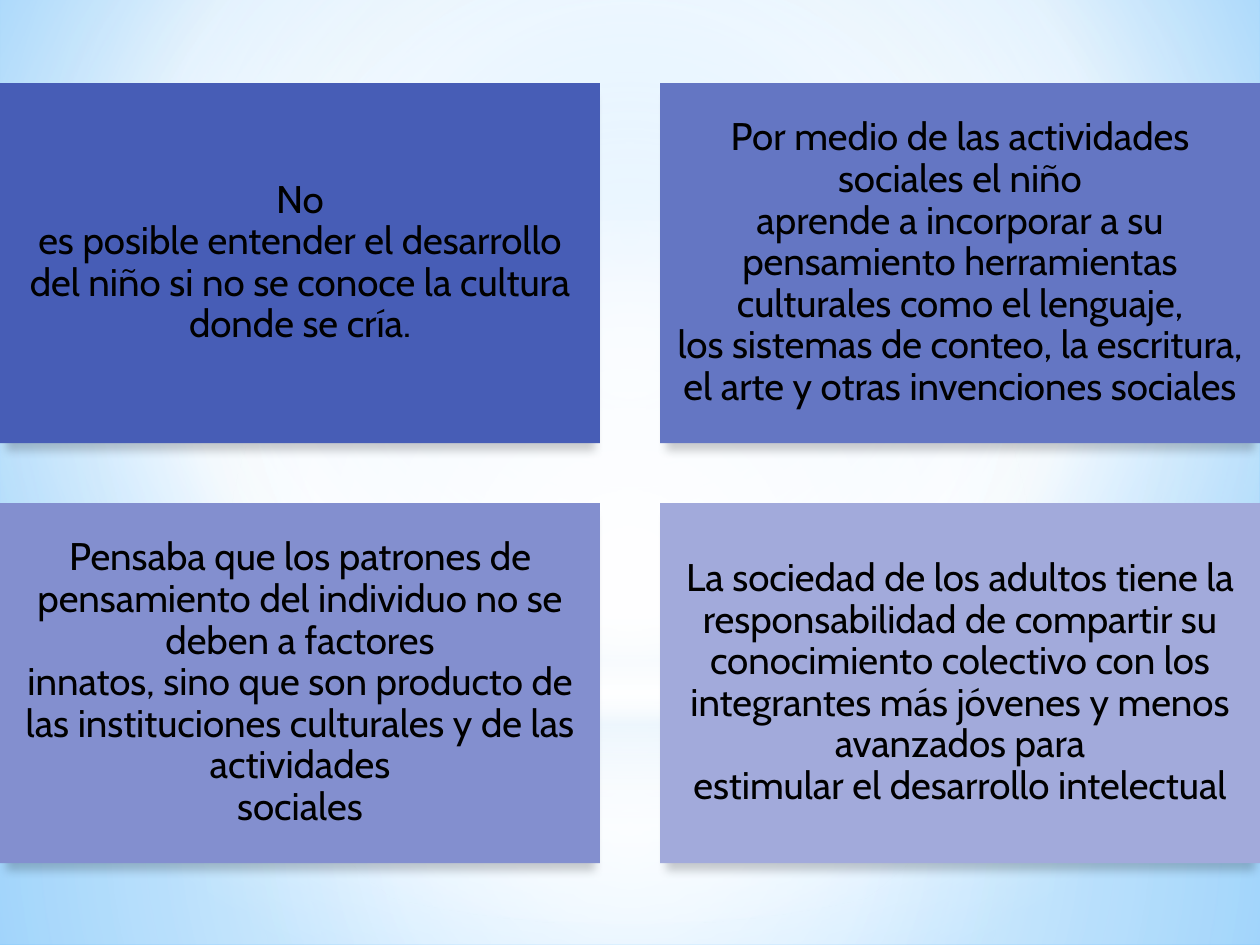
import pptx
import pptx.util
import pptx.oxml
import pptx.oxml.ns
import pptx.dml.color
import pptx.enum.shapes
import pptx.enum.text

COLORS = {
    "white": "FFFFFF", "mist": "B4DCFA", "sky": "9ED5FF", "deep": "5BB9FF",
    "text": "000000", "shadow": "000000",
    "culture": "475DB6", "tools": "6476C3", "patterns": "838FCF", "adults": "A2AADB",
}
NS = pptx.oxml.ns.nsdecls("a")
RECT = pptx.enum.shapes.MSO_SHAPE.RECTANGLE
OVAL = pptx.enum.shapes.MSO_SHAPE.OVAL

# Grid: 21 columns across; square rows, starting below the top margin
UNIT = 10 / 21
TOP = 0.66
BOX_COLS, BOX_ROWS, GAP = 10, 6, 1

CENTER = (50, 50, 50, 50)
FRAME_FORMAT = {
    "word_wrap": True,
    "vertical_anchor": pptx.enum.text.MSO_ANCHOR.MIDDLE,
    **{f"margin_{side}": pptx.util.Inches(0.09) for side in ("left", "top", "right", "bottom")},
}
PARAGRAPH_FORMAT = {"alignment": pptx.enum.text.PP_ALIGN.CENTER, "line_spacing": 0.9}
FONT_FORMAT = {"name": "Cabin", "size": pptx.util.Pt(22)}


def apply_format(target, values):
    for name, value in values.items():
        setattr(target, name, value)


def gradient(stops, focus=None, angle=90):
    """Gradient of (position, colour, opacity) in percent, round if a focus is given."""
    marks = "".join(
        f'<a:gs pos="{position * 1000}"><a:srgbClr val="{COLORS[color]}">'
        f'<a:alpha val="{opacity * 1000}"/></a:srgbClr></a:gs>'
        for position, color, opacity in stops)
    if focus:
        left, top, right, bottom = (share * 1000 for share in focus)
        course = (f'<a:path path="circle"><a:fillToRect l="{left}" t="{top}" '
                  f'r="{right}" b="{bottom}"/></a:path>')
    else:
        course = f'<a:lin ang="{angle * 60000}" scaled="0"/>'
    return pptx.oxml.parse_xml(
        f'<a:gradFill {NS} rotWithShape="1"><a:gsLst>{marks}</a:gsLst>{course}</a:gradFill>')


class SlideBuilder:
    def __init__(self, presentation):
        self.width = presentation.slide_width
        self.height = presentation.slide_height
        self.slide = presentation.slides.add_slide(presentation.slide_layouts[6])

    def shape(self, kind, left, top, width, height):
        """Plain shape, placed in shares of the slide's size."""
        shape = self.slide.shapes.add_shape(
            kind, round(left * self.width), round(top * self.height),
            round(width * self.width), round(height * self.height))
        shape.shadow.inherit = False
        shape.line.fill.background()
        return shape

    def background(self, stops, focus):
        fill = self.slide.background.fill
        fill.gradient()
        old = self.slide.element.find(".//" + pptx.oxml.ns.qn("a:gradFill"))
        old.getparent().replace(old, gradient(stops, focus))

    def glow(self, kind, top, height, stops, focus=None):
        """Full-width translucent layer; top and height in inches of 7.5."""
        layer = self.shape(kind, 0, top / 7.5, 1, height / 7.5)
        layer.fill.solid()
        properties = layer.element.spPr
        old = properties.find(pptx.oxml.ns.qn("a:solidFill"))
        properties.replace(old, gradient(stops, focus))

    def box(self, column, row, color, words):
        box = self.shape(RECT, column * UNIT / 10, (TOP + row * UNIT) / 7.5,
                         BOX_COLS * UNIT / 10, BOX_ROWS * UNIT / 7.5)
        box.fill.solid()
        box.fill.fore_color.rgb = pptx.dml.color.RGBColor.from_string(COLORS[color])
        self.drop_shadow(box)
        frame = box.text_frame
        apply_format(frame, FRAME_FORMAT)
        paragraph = frame.paragraphs[0]
        paragraph.text = words.replace("\n", "\v")
        apply_format(paragraph, PARAGRAPH_FORMAT)
        for run in paragraph.runs:
            apply_format(run.font, FONT_FORMAT)
            run.font.color.rgb = pptx.dml.color.RGBColor.from_string(COLORS["text"])

    def drop_shadow(self, shape):
        effects = shape.element.spPr.find(pptx.oxml.ns.qn("a:effectLst"))
        effects.append(pptx.oxml.parse_xml(
            f'<a:outerShdw {NS} blurRad="63500" dist="50800" dir="5400000" sx="98000" '
            f'sy="98000" rotWithShape="0"><a:srgbClr val="{COLORS["shadow"]}">'
            f'<a:alpha val="20000"/></a:srgbClr></a:outerShdw>'))


STATEMENTS = [
    ("culture", "No\nes posible entender el desarrollo del niño si no se conoce "
                "la cultura donde se cría."),
    ("tools", "Por medio de las actividades sociales el niño\n"
              "aprende a incorporar a su pensamiento herramientas culturales como el lenguaje,\n"
              "los sistemas de conteo, la escritura, el arte y otras invenciones sociales"),
    ("patterns", "Pensaba que los patrones de pensamiento del individuo no se deben a factores\n"
                 "innatos, sino que son producto de las instituciones culturales y de las "
                 "actividades\nsociales"),
    ("adults", "La sociedad de los adultos tiene la responsabilidad de compartir su\n"
               "conocimiento colectivo con los integrantes más jóvenes y menos avanzados para\n"
               "estimular el desarrollo intelectual"),
]


def main():
    presentation = pptx.Presentation()
    presentation.slide_width = pptx.util.Inches(10)
    presentation.slide_height = pptx.util.Inches(7.5)
    builder = SlideBuilder(presentation)

    # Sky backdrop with light layers
    builder.background([(0, "sky", 100), (60, "white", 100), (100, "deep", 100)],
                       (20, 10, 20, 60))
    builder.glow(RECT, 5.58, 1.92,
                 [(0, "white", 91), (37, "white", 76), (100, "mist", 79)], CENTER)
    builder.glow(RECT, 0, 5.58,
                 [(0, "white", 89), (48, "white", 62), (100, "mist", 79)], CENTER)
    builder.glow(RECT, 4.12, 2.5,
                 [(0, "white", 0), (29, "white", 30), (45, "mist", 40),
                  (55, "white", 26), (65, "mist", 60), (100, "white", 0)])
    builder.glow(OVAL, 1.75, 5.58, [(0, "white", 100), (56, "white", 0)], CENTER)

    # Two by two statements
    for index, (color, words) in enumerate(STATEMENTS):
        row, column = divmod(index, 2)
        builder.box(column * (BOX_COLS + GAP), row * (BOX_ROWS + GAP), color, words)

    presentation.save("out.pptx")


if __name__ == "__main__":
    main()
